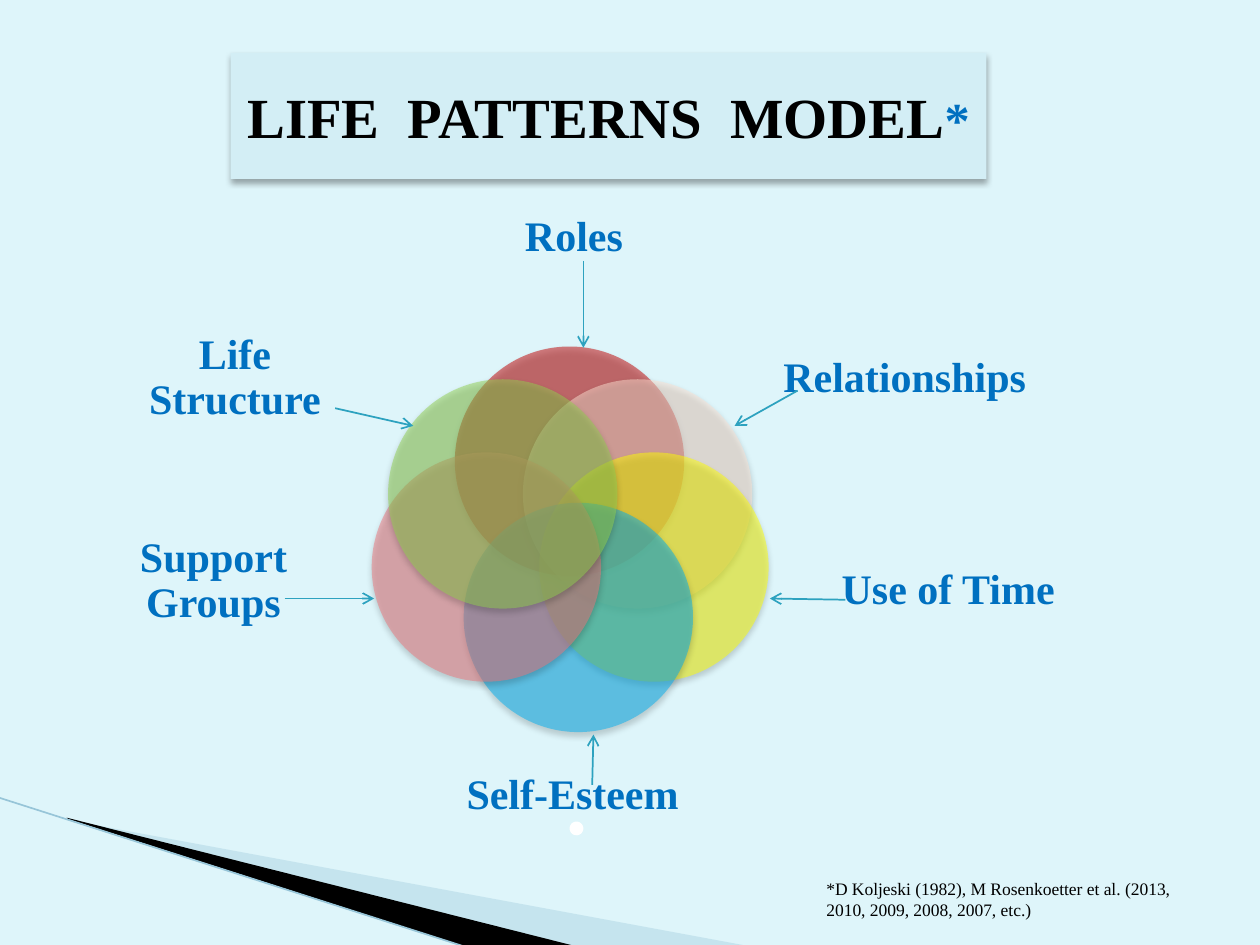
"""Builds the Life Patterns Model slide."""
from dataclasses import dataclass

from lxml.etree import SubElement
from pptx import Presentation
from pptx.dml.color import RGBColor
from pptx.enum.shapes import MSO_CONNECTOR, MSO_SHAPE
from pptx.enum.text import MSO_ANCHOR, PP_ALIGN
from pptx.oxml.ns import qn
from pptx.util import Inches, Pt


@dataclass(frozen=True)
class Theme:
    background: str = "DEF5FA"
    panel: str = "D3EEF5"
    swoosh: str = "A0CBDC"
    ink: str = "000000"
    accent: str = "0070C0"
    arrow: str = "2DA2BF"
    edge: str = "97C5D8"
    dot: str = "474B78"
    white: str = "FFFFFF"
    font: str = "Times New Roman"
    title: float = 32.4
    star: float = 28.8
    label: float = 24
    note: float = 10


def add_text(p, text, *, size, color, font, bold=False):
    r = p.add_run()
    r.text = text
    r.font.size, r.font.bold, r.font.name = Pt(size), bold, font
    r.font.color.rgb = RGBColor.from_string(color)


class SlideBuilder:
    def __init__(self, slide, theme):
        self.slide, self.theme = slide, theme
        self.shapes = slide.shapes
        fill = slide.background.fill
        fill.solid()
        fill.fore_color.rgb = RGBColor.from_string(theme.background)

    def paint(self, sp, color, alpha=100, shadow=False):
        sp.shadow.inherit = False
        sp.fill.solid()
        sp.fill.fore_color.rgb = RGBColor.from_string(color)
        sp.line.fill.background()
        if alpha < 100:
            clr = sp._element.spPr.find(qn("a:solidFill"))[0]
            SubElement(clr, qn("a:alpha"), val=str(alpha * 1000))
        if shadow:
            effects = sp._element.spPr.find(qn("a:effectLst"))
            outer = SubElement(effects, qn("a:outerShdw"), blurRad=str(Pt(3.5)),
                               dist=str(Pt(2.2)), dir="5400000", rotWithShape="0")
            clr = SubElement(outer, qn("a:srgbClr"), val=self.theme.ink)
            SubElement(clr, qn("a:alpha"), val="32000")

    def shape(self, kind, box, color, alpha=100, shadow=True):
        sp = self.shapes.add_shape(kind, *map(Inches, box))
        self.paint(sp, color, alpha, shadow)
        return sp

    def polygon(self, points, color, alpha=100):
        points = [(Inches(x), Inches(y)) for x, y in points]
        builder = self.shapes.build_freeform(*points[0])
        builder.add_line_segments(points[1:])
        self.paint(builder.convert_to_shape(), color, alpha)

    def line(self, start, end, color, width=1, arrow=True):
        cn = self.shapes.add_connector(MSO_CONNECTOR.STRAIGHT, *map(Inches, start + end))
        cn.line.color.rgb = RGBColor.from_string(color)
        cn.line.width = Pt(width)
        if arrow:
            SubElement(cn.line._get_or_add_ln(), qn("a:tailEnd"), type="arrow")
        SubElement(cn._element.spPr, qn("a:effectLst"))

    def title(self, box, text, mark):
        t = self.theme
        tf = self.shape(MSO_SHAPE.RECTANGLE, box, t.panel).text_frame
        tf.word_wrap = True
        tf.vertical_anchor = MSO_ANCHOR.MIDDLE
        p = tf.paragraphs[0]
        p.alignment = PP_ALIGN.CENTER
        add_text(p, text, size=t.title, color=t.ink, font=t.font, bold=True)
        add_text(p, mark, size=t.star, color=t.accent, font=t.font, bold=True)

    def label(self, box, text):
        t = self.theme
        tf = self.shapes.add_textbox(*map(Inches, box)).text_frame
        tf.word_wrap = True
        tf.vertical_anchor = MSO_ANCHOR.MIDDLE
        tf.margin_left = tf.margin_right = tf.margin_top = tf.margin_bottom = 0
        p = tf.paragraphs[0]
        p.alignment, p.line_spacing = PP_ALIGN.CENTER, 0.9
        add_text(p, text, size=t.label, color=t.accent, font=t.font, bold=True)

    def note(self, box, text):
        t = self.theme
        tf = self.shapes.add_textbox(*map(Inches, box)).text_frame
        tf.word_wrap = True
        add_text(tf.paragraphs[0], text, size=t.note, color=t.ink, font=t.font)

    def dot(self, box):
        sp = self.shape(MSO_SHAPE.OVAL, box, self.theme.dot, 50, shadow=False)
        sp.line.color.rgb = RGBColor.from_string(self.theme.white)
        sp.line.width = Pt(4.33)


DIAMETER = 1.82
PATTERNS = [
    ("Roles", (3.51, 1.33, 2.09, 1.12), (3.61, 2.75), "C00000", (4.63, 2.07), (4.63, 2.76)),
    ("Relationships", (5.92, 2.39, 2.52, 1.23), (4.15, 3.01), "FBE0D1", (6.33, 3.1), (5.83, 3.38)),
    ("Use of Time", (6.48, 4.09, 2.09, 1.2), (4.28, 3.59), "FFFF00", (6.71, 4.76), (6.11, 4.75)),
    ("Self-Esteem", (3.5, 5.72, 2.09, 1.2), (3.68, 3.99), "00B0F0", (4.7, 6.23), (4.71, 5.83)),
    ("Support Groups", (0.73, 3.96, 1.93, 1.31), (2.95, 3.59), "EC767C", (2.26, 4.75), (2.97, 4.75)),
    ("Life Structure", (0.88, 2.39, 1.97, 1.23), (3.08, 3.01), "92D050", (2.66, 3.24), (3.28, 3.38)),
]


def main():
    prs = Presentation()
    prs.slide_width, prs.slide_height = Inches(10), Inches(7.5)
    theme = Theme()
    s = SlideBuilder(prs.slides.add_slide(prs.slide_layouts[6]), theme)

    s.polygon([(0.55, 6.51), (5.95, 7.51), (4.56, 7.51), (0.55, 6.5)], theme.swoosh, 40)
    s.polygon([(0.53, 6.49), (4.57, 7.51), (3.72, 7.52), (0.54, 6.5)], theme.ink)
    s.line((-0.01, 6.33), (3.71, 7.52), theme.edge, 0.95, arrow=False)
    s.title((1.83, 0.42, 6, 1), "LIFE  PATTERNS  MODEL", "*")

    for text, box, corner, color, _, _ in PATTERNS:
        s.shape(MSO_SHAPE.OVAL, corner + (DIAMETER, DIAMETER), color, 50)
        s.label(box, text)
    s.dot((4.55, 6.55, 0.05, 0.05))
    for *_, start, end in PATTERNS:
        s.line(start, end, theme.arrow)

    s.note((6.46, 6.92, 3.18, 0.44),
           "*D Koljeski (1982), M Rosenkoetter et al. (2013, 2010, 2009, 2008, 2007, etc.)")
    prs.save("out.pptx")


if __name__ == "__main__":
    main()
